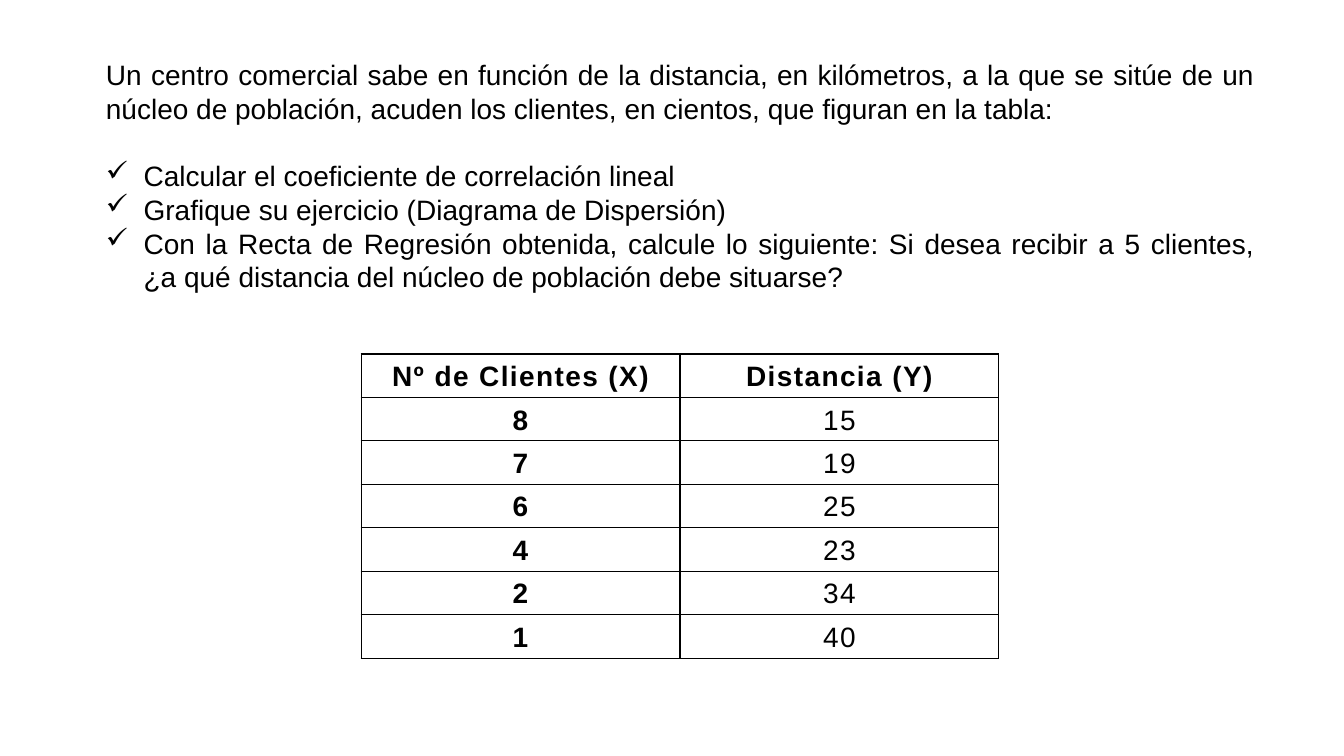
from lxml import etree
from pptx import Presentation
from pptx.dml.color import RGBColor
from pptx.enum.shapes import MSO_SHAPE
from pptx.enum.text import MSO_ANCHOR, PP_ALIGN
from pptx.oxml.ns import qn
from pptx.util import Cm, Pt

RECT = MSO_SHAPE.RECTANGLE
MIDDLE = MSO_ANCHOR.MIDDLE
CENTER, JUSTIFY = PP_ALIGN.CENTER, PP_ALIGN.JUSTIFY

COLORS = {"ink": "000000", "paper": "FFFFFF"}
FONT = {"name": "Arial", "size": Pt(20)}
LINE_HEIGHT = Pt(24)
HANGING = Cm(0.95)

INTRO = ("Un centro comercial sabe en función de la distancia, en kilómetros, "
         "a la que se sitúe de un núcleo de población, acuden los clientes, "
         "en cientos, que figuran en la tabla:")
TASKS = [
    "Calcular el coeficiente de correlación lineal",
    "Grafique su ejercicio (Diagrama de Dispersión)",
    "Con la Recta de Regresión obtenida, calcule lo siguiente: Si desea "
    "recibir a 5 clientes, ¿a qué distancia del núcleo de población debe situarse?",
]
HEADERS = ("Nº de Clientes (X)", "Distancia (Y)")
DATA = [(8, 15), (7, 19), (6, 25), (4, 23), (2, 34), (1, 40)]


def rgb(name):
    return RGBColor.from_string(COLORS[name])


def paint(obj, name):
    obj.fill.solid()
    obj.fill.fore_color.rgb = rgb(name)


def add_text(p, text, align, bold=False):
    p.alignment = align
    r = p.add_run()
    r.text = text
    for key, value in {**FONT, "bold": bold}.items():
        setattr(r.font, key, value)
    r.font.color.rgb = rgb("ink")
    return r


def add_check(p):
    """Give the paragraph a hanging check-mark bullet."""
    pPr = p._p.get_or_add_pPr()
    pPr.set("marL", str(HANGING))
    pPr.set("indent", str(-HANGING))
    etree.SubElement(pPr, qn("a:buChar"), char="✓")


def add_borders(cell):
    """Draw thin lines on all four sides, ahead of the cell's fill."""
    tcPr = cell._tc.get_or_add_tcPr()
    for i, side in enumerate(("lnL", "lnR", "lnT", "lnB")):
        ln = etree.Element(qn(f"a:{side}"), w=str(Pt(1)))
        fill = etree.SubElement(ln, qn("a:solidFill"))
        etree.SubElement(fill, qn("a:srgbClr"), val=COLORS["ink"])
        tcPr.insert(i, ln)


def add_statement(slide, left, top, width, height):
    sp = slide.shapes.add_shape(RECT, left, top, width, height)
    sp.shadow.inherit = False
    sp.line.fill.background()
    paint(sp, "paper")
    tf = sp.text_frame
    tf.word_wrap = True
    tf.vertical_anchor = MIDDLE
    intro = tf.paragraphs[0]
    add_text(intro, INTRO, JUSTIFY)
    intro.line_spacing = LINE_HEIGHT
    intro.space_after = LINE_HEIGHT
    for task in TASKS:
        p = tf.add_paragraph()
        add_text(p, task, JUSTIFY)
        p.line_spacing = LINE_HEIGHT
        add_check(p)


def add_data_table(slide, left, top, width, height):
    rows = [HEADERS, *DATA]
    table = slide.shapes.add_table(len(rows), len(HEADERS),
                                   left, top, width, height).table
    margins = {"margin_left": Cm(0.25), "margin_right": Cm(0.25),
               "margin_top": Cm(0.08), "margin_bottom": Cm(0.08)}
    for i, row in enumerate(rows):
        for j, value in enumerate(row):
            cell = table.cell(i, j)
            paint(cell, "paper")
            add_borders(cell)
            cell.vertical_anchor = MIDDLE
            for key, margin in margins.items():
                setattr(cell, key, margin)
            p = cell.text_frame.paragraphs[0]
            p.line_spacing = 1.07
            r = add_text(p, str(value), CENTER, bold=i == 0 or j == 0)
            r._r.get_or_add_rPr().set("spc", "100")


def main():
    prs = Presentation()
    prs.slide_width, prs.slide_height = Cm(33.87), Cm(19.05)
    slide = prs.slides.add_slide(prs.slide_layouts[6])
    add_data_table(slide, Cm(9.1), Cm(8.92), Cm(16.07), Cm(7.67))
    add_statement(slide, Cm(2.42), Cm(1.3), Cm(29.46), Cm(6.25))
    prs.save("out.pptx")


if __name__ == "__main__":
    main()
